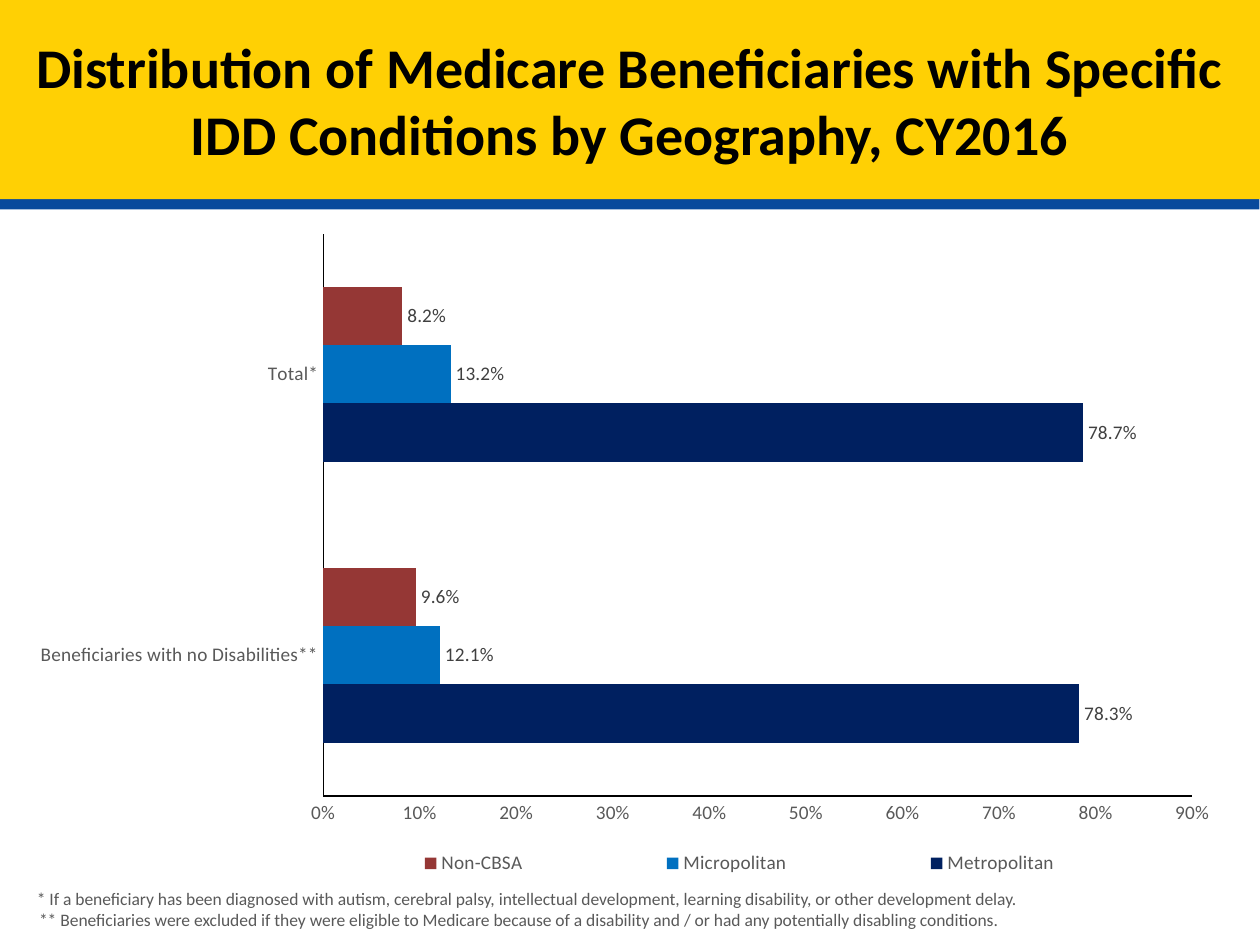
from lxml import etree
from pptx import Presentation
from pptx.chart.data import CategoryChartData
from pptx.dml.color import RGBColor
from pptx.enum.chart import XL_CHART_TYPE, XL_LABEL_POSITION, XL_LEGEND_POSITION, XL_TICK_MARK
from pptx.enum.text import MSO_ANCHOR, MSO_AUTO_SIZE, PP_ALIGN
from pptx.oxml import parse_xml
from pptx.oxml.ns import nsdecls, qn
from pptx.util import Inches, Pt

FONT = "Calibri"
BLACK = RGBColor(0x00, 0x00, 0x00)
YELLOW = RGBColor(0xFF, 0xD0, 0x04)
BLUE = RGBColor(0x08, 0x4A, 0x9C)
TEXT_GRAY = RGBColor(0x59, 0x59, 0x59)
LABEL_GRAY = RGBColor(0x40, 0x40, 0x40)

TITLE = "Distribution of Medicare Beneficiaries with Specific IDD Conditions by Geography, CY2016"
CATEGORIES = ["Beneficiaries with no Disabilities**", "Total*"]
SERIES = [
    ("Metropolitan", (0.783, 0.787), RGBColor(0x00, 0x20, 0x60)),
    ("Micropolitan", (0.121, 0.132), RGBColor(0x00, 0x70, 0xC0)),
    ("Non-CBSA", (0.096, 0.082), RGBColor(0x95, 0x37, 0x35)),
]
FOOTNOTES = [
    "* If a beneficiary has been diagnosed with autism, cerebral palsy, intellectual development, "
    "learning disability, or other development delay.",
    "** Beneficiaries were excluded if they were eligible to Medicare because of a disability "
    "and / or had any potentially disabling conditions.",
]


def set_font(font, size, color, bold=False):
    font.name = FONT
    font.size = Pt(size)
    font.bold = bold
    font.color.rgb = color


def set_layout(parent, position, x, y, width, height, inner=False):
    """Place a chart part by fractions of the chart area."""
    for old_layout in parent.findall(qn("c:layout")):
        parent.remove(old_layout)
    target = '<c:layoutTarget val="inner"/>' if inner else ""
    parent.insert(position, parse_xml(
        f'<c:layout {nsdecls("c")}><c:manualLayout>{target}'
        '<c:xMode val="edge"/><c:yMode val="edge"/>'
        f'<c:x val="{x}"/><c:y val="{y}"/><c:w val="{width}"/><c:h val="{height}"/>'
        '</c:manualLayout></c:layout>'))


def add_title(slide, left, top, width, height):
    title = slide.shapes.title
    title.left, title.top, title.width, title.height = left, top, width, height
    title.fill.solid()
    title.fill.fore_color.rgb = YELLOW
    # The hard shadow forms the blue rule under the band
    title.element.spPr.append(parse_xml(
        f'<a:effectLst {nsdecls("a")}><a:outerShdw blurRad="0" dist="{Pt(6)}" '
        f'dir="{94 * 60000}" algn="t" rotWithShape="0"><a:srgbClr val="{BLUE}"/>'
        '</a:outerShdw></a:effectLst>'))
    frame = title.text_frame
    frame.text = TITLE
    frame.word_wrap = True
    frame.auto_size = MSO_AUTO_SIZE.NONE
    frame.vertical_anchor = MSO_ANCHOR.MIDDLE
    paragraph = frame.paragraphs[0]
    paragraph.alignment = PP_ALIGN.CENTER
    paragraph.line_spacing = 1.0
    paragraph.space_before = Pt(0)
    set_font(paragraph.font, 32, BLACK, bold=True)


def add_geography_chart(slide, left, top, width, height):
    data = CategoryChartData(number_format="0.0%")
    data.categories = CATEGORIES
    for name, values, _ in SERIES:
        data.add_series(name, values)
    chart = slide.shapes.add_chart(
        XL_CHART_TYPE.BAR_CLUSTERED, left, top, width, height, data).chart
    chart.has_title = False
    set_font(chart.font, 11, BLACK)

    # Bars and value labels
    plot = chart.plots[0]
    plot.gap_width = 182
    plot.overlap = 0
    plot.vary_by_categories = False
    for series, (_, _, color) in zip(plot.series, SERIES):
        series.format.fill.solid()
        series.format.fill.fore_color.rgb = color
        labels = series.data_labels
        labels.show_value = True
        labels.position = XL_LABEL_POSITION.OUTSIDE_END
        labels.number_format = "0.0%"
        labels.number_format_is_linked = False
        set_font(labels.font, 11, LABEL_GRAY)

    # Axes
    for axis in (chart.category_axis, chart.value_axis):
        axis.has_major_gridlines = False
        axis.major_tick_mark = axis.minor_tick_mark = XL_TICK_MARK.NONE
        axis.format.line.color.rgb = BLACK
        axis.format.line.width = Pt(0.75)
        set_font(axis.tick_labels.font, 11, TEXT_GRAY)
    chart.value_axis.minimum_scale = 0
    chart.value_axis.maximum_scale = 0.9
    chart.value_axis.major_unit = 0.1
    chart.value_axis.tick_labels.number_format = "0%"
    chart.value_axis.tick_labels.number_format_is_linked = False

    # Legend and plot positions
    chart.has_legend = True
    legend = chart.legend
    legend.position = XL_LEGEND_POSITION.BOTTOM
    legend.include_in_layout = False
    set_font(legend.font, 11, TEXT_GRAY)
    chart_element = chart.element.find(qn("c:chart"))
    set_layout(chart_element.find(qn("c:legend")), 1, 0.22, 0.95, 0.75, 0.05)
    set_layout(chart_element.find(qn("c:plotArea")), 0, 0.25, 0.02, 0.72, 0.85, inner=True)


def add_footnotes(slide, left, top, width, height):
    frame = slide.shapes.add_textbox(left, top, width, height).text_frame
    frame.word_wrap = True
    frame.text = "\n".join(FOOTNOTES)
    for paragraph in frame.paragraphs:
        paragraph.alignment = PP_ALIGN.CENTER
        set_font(paragraph.font, 10, TEXT_GRAY)
    # The second note sits slightly left of centre
    frame.paragraphs[1]._p.get_or_add_pPr().set("marR", str(Inches(0.13)))


def main():
    presentation = Presentation()
    presentation.slide_width = Inches(10)
    presentation.slide_height = Inches(7.5)
    slide = presentation.slides.add_slide(presentation.slide_layouts[5])
    add_title(slide, Inches(0), Inches(0), Inches(10), Inches(1.58))
    add_footnotes(slide, Inches(-0.5), Inches(7), Inches(9.36), Inches(0.61))
    add_geography_chart(slide, Inches(0.17), Inches(1.75), Inches(9.58), Inches(5.25))
    presentation.save("out.pptx")


if __name__ == "__main__":
    main()
